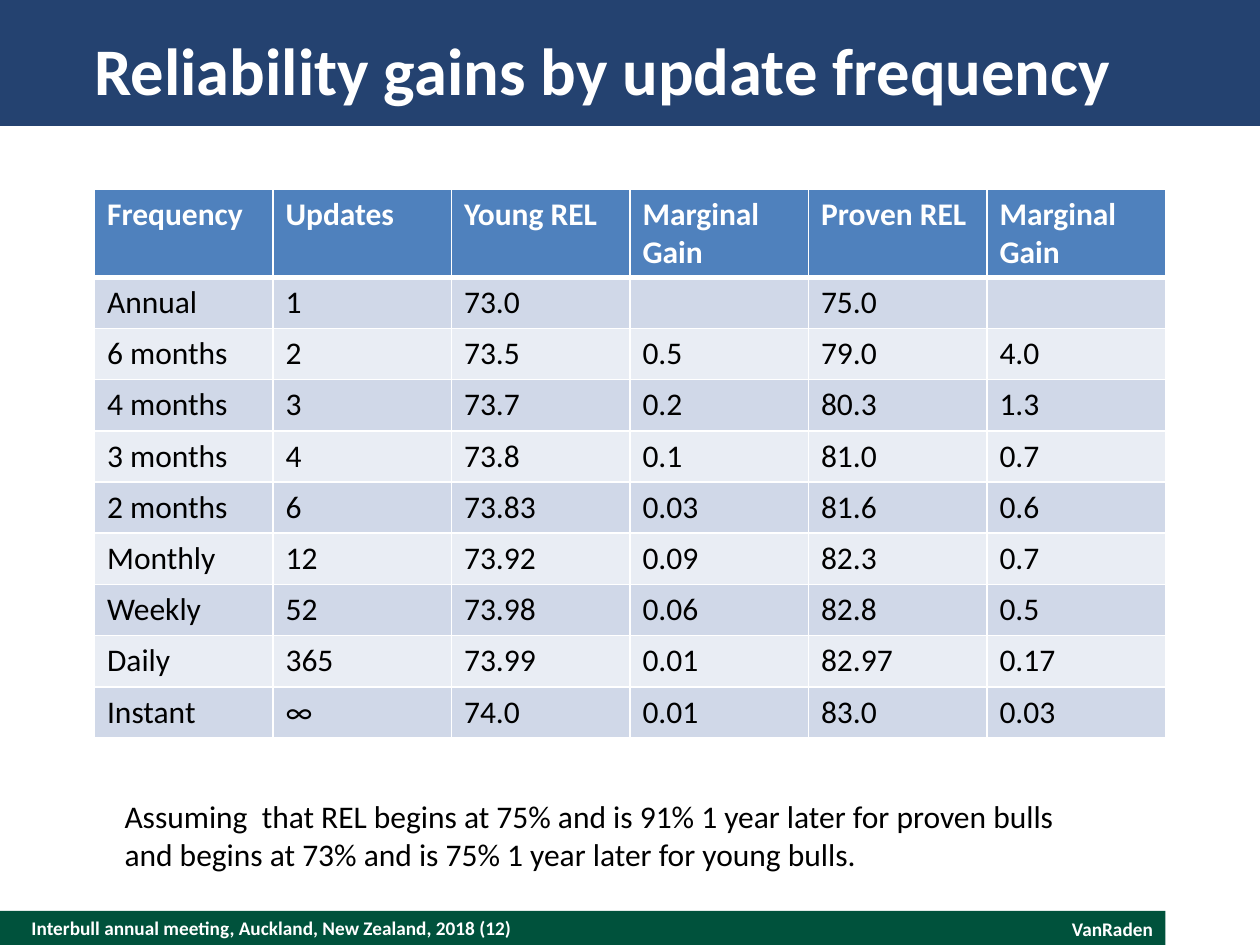
from lxml import etree
from pptx import Presentation
from pptx import util as u
from pptx.dml.color import RGBColor
from pptx.enum import shapes, text
from pptx.oxml import ns

HUES = {
    "green": "00523C", "navy": "244270", "white": "FFFFFF", "black": "000000",
    "head": "4F81BD", "dark": "D0D8E8", "light": "E9EDF4",
}

deck = Presentation()
deck.slide_width = u.Inches(10)
deck.slide_height = u.Inches(7.5)
slide = deck.slides.add_slide(deck.slide_layouts[6])


def write(para, words, size, hue, bold=False):
    run = para.add_run()
    run.text = words
    run.font.name = "Calibri"
    run.font.size = u.Pt(size)
    run.font.bold = bold
    run.font.color.rgb = RGBColor.from_string(HUES[hue])


def rule(cell, side, width):
    line = etree.Element(ns.qn("a:" + side), w=str(u.Pt(width)))
    fill = etree.SubElement(line, ns.qn("a:solidFill"))
    etree.SubElement(fill, ns.qn("a:srgbClr"), val=HUES["white"])
    return line


for top, width, height, hue in [(7.23, 9.25, 0.27, "green"), (0, 10, 1, "navy")]:
    bar = slide.shapes.add_shape(
        shapes.MSO_SHAPE.RECTANGLE, 0, u.Inches(top), u.Inches(width), u.Inches(height))
    bar.shadow.inherit = False
    bar.fill.solid()
    bar.fill.fore_color.rgb = RGBColor.from_string(HUES[hue])
    bar.line.fill.background()

LEFT, RIGHT = text.PP_ALIGN.LEFT, text.PP_ALIGN.RIGHT
TOP, MIDDLE = text.MSO_ANCHOR.TOP, text.MSO_ANCHOR.MIDDLE
notes = [
    "Assuming  that REL begins at 75% and is 91% 1 year later for proven bulls",
    "and begins at 73% and is 75% 1 year later for young bulls.",
]
boxes = [
    ((0.25, 7.23, 6.5, 0.27), ["Interbull annual meeting, Auckland, New Zealand, 2018 (12)"],
     11, "white", True, LEFT, MIDDLE, True),
    ((7.25, 7.23, 2, 0.29), ["VanRaden"], 11, "white", True, RIGHT, TOP, True),
    ((0.75, 0.2, 8.5, 0.7), ["Reliability gains by update frequency"],
     38, "white", True, LEFT, MIDDLE, True),
    ((0.89, 6.28, 7.67, 0.71), notes, 18, "black", False, LEFT, TOP, False),
]
for place, lines, size, hue, bold, align, anchor, wrap in boxes:
    frame = slide.shapes.add_textbox(*map(u.Inches, place)).text_frame
    frame.word_wrap = wrap
    frame.vertical_anchor = anchor
    if anchor == MIDDLE:
        frame.margin_left = frame.margin_right = 0
        frame.margin_top = frame.margin_bottom = 0
    for i, words in enumerate(lines):
        para = frame.add_paragraph() if i else frame.paragraphs[0]
        para.alignment = align
        write(para, words, size, hue, bold)

rows = [
    ("Frequency", "Updates", "Young REL", "Marginal Gain", "Proven REL", "Marginal Gain"),
    ("Annual", "1", "73.0", "", "75.0", ""),
    ("6 months", "2", "73.5", "0.5", "79.0", "4.0"),
    ("4 months", "3", "73.7", "0.2", "80.3", "1.3"),
    ("3 months", "4", "73.8", "0.1", "81.0", "0.7"),
    ("2 months", "6", "73.83", "0.03", "81.6", "0.6"),
    ("Monthly", "12", "73.92", "0.09", "82.3", "0.7"),
    ("Weekly", "52", "73.98", "0.06", "82.8", "0.5"),
    ("Daily", "365", "73.99", "0.01", "82.97", "0.17"),
    ("Instant", "∞", "74.0", "0.01", "83.0", "0.03"),
]
table = slide.shapes.add_table(
    len(rows), len(rows[0]), u.Inches(0.75), u.Inches(1.5), u.Inches(8.5), u.Inches(4.35)).table
head = u.Inches(0.69)
for r, row in enumerate(rows):
    table.rows[r].height = (u.Inches(4.35) - head) // (len(rows) - 1) if r else head
    band = ("dark" if r % 2 else "light") if r else "head"
    for c, words in enumerate(row):
        cell = table.cell(r, c)
        props = cell._tc.get_or_add_tcPr()
        for side in ("lnL", "lnR", "lnT", "lnB"):
            thick = (r == 0 and side == "lnB") or (r == 1 and side == "lnT")
            props.append(rule(cell, side, 3 if thick else 1))
        cell.fill.solid()
        cell.fill.fore_color.rgb = RGBColor.from_string(HUES[band])
        if words:
            write(cell.text_frame.paragraphs[0], words, 18, "black" if r else "white", r == 0)

deck.save("out.pptx")
